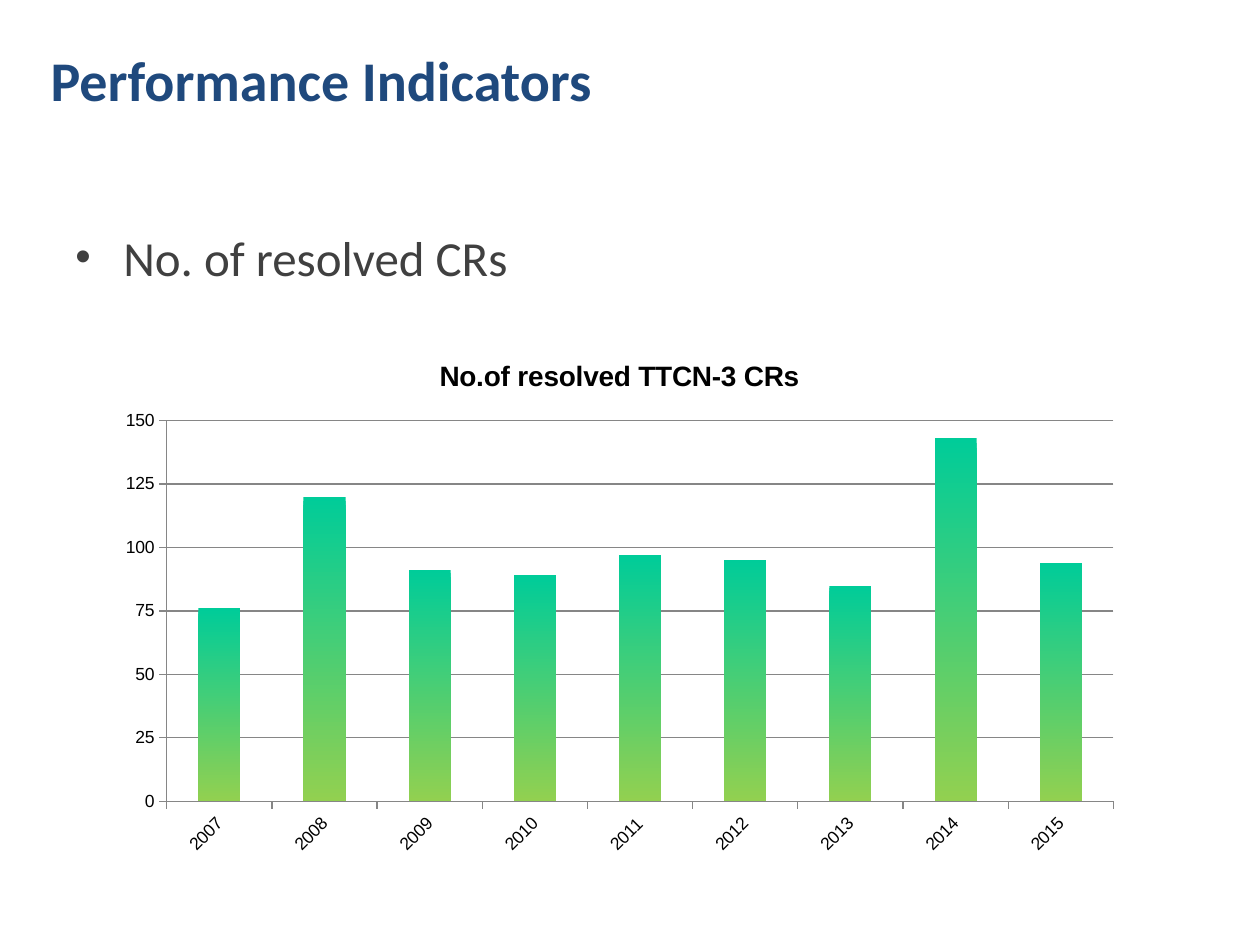
"""Build the Performance Indicators slide with its chart of resolved CRs."""
from lxml import etree
from pptx import Presentation
from pptx import util as u
from pptx.chart.data import CategoryChartData
from pptx.dml.color import RGBColor
from pptx.enum import chart as ch, text
from pptx.oxml import parse_xml
from pptx.oxml.ns import nsdecls, qn

HEAD = "Performance Indicators"
POINT = "No. of resolved CRs"
NAME = "No.of resolved TTCN-3 CRs"
DATA = {
    "2007": 76, "2008": 120, "2009": 91, "2010": 89, "2011": 97,
    "2012": 95, "2013": 85, "2014": 143, "2015": 94,
}
PLOT = {"x": 0.06, "y": 0.16, "w": 0.92, "h": 0.72}

NAVY = RGBColor(0x1F, 0x49, 0x7D)
DARK = RGBColor(0x40, 0x40, 0x40)
BLACK = RGBColor(0, 0, 0)
GREY = RGBColor(0x86, 0x86, 0x86)
TEAL = RGBColor(0x00, 0xCC, 0x99)
LIME = RGBColor(0x92, 0xD0, 0x50)


def px(n):
    return u.Emu(round(n * 914400 / 126))


def box(*dims):
    return [px(n) for n in dims]


def style(font, face, size, color, bold=False):
    font.name, font.size, font.bold = face, u.Pt(size), bold
    font.color.rgb = color


def add_run(para, words, *look):
    run = para.add_run()
    run.text = words
    style(run.font, *look)


def add_head(slide):
    head = slide.shapes.title
    head.left, head.top, head.width, head.height = box(38, 0, 1134, 158)
    frame = head.text_frame
    frame.vertical_anchor = text.MSO_ANCHOR.MIDDLE
    para = frame.paragraphs[0]
    para.alignment = text.PP_ALIGN.LEFT
    add_run(para, HEAD, "Calibri", 32, NAVY, True)


def add_point(slide):
    frame = slide.shapes.add_textbox(*box(63, 221, 1134, 84)).text_frame
    frame.word_wrap = True
    para = frame.paragraphs[0]
    props = para._p.get_or_add_pPr()
    props.set("marL", str(px(48)))
    props.set("indent", str(px(-48)))
    etree.SubElement(props, qn("a:buSzPct")).set("val", "90000")
    etree.SubElement(props, qn("a:buFont")).set("typeface", "Arial")
    etree.SubElement(props, qn("a:buChar")).set("char", "•")
    add_run(para, POINT, "Calibri", 28, DARK)


def place_plot(chart):
    area = chart._chartSpace.chart.plotArea
    for old in area.findall(qn("c:layout")):
        area.remove(old)
    dims = "".join(f'<c:{k} val="{v}"/>' for k, v in PLOT.items())
    area.insert(0, parse_xml(
        f'<c:layout {nsdecls("c")}><c:manualLayout>'
        '<c:layoutTarget val="inner"/><c:xMode val="edge"/>'
        f'<c:yMode val="edge"/>{dims}</c:manualLayout></c:layout>'))


def add_bars(slide):
    data = CategoryChartData()
    data.categories = list(DATA)
    data.add_series("Series 1", list(DATA.values()))
    chart = slide.shapes.add_chart(
        ch.XL_CHART_TYPE.COLUMN_STACKED, *box(105, 336, 1029, 529), data).chart
    style(chart.font, "Arial", 10, BLACK)
    chart.has_legend = False
    chart.has_title = True
    add_run(chart.chart_title.text_frame.paragraphs[0],
            NAME, "Arial", 16, BLACK, True)
    place_plot(chart)

    plot = chart.plots[0]
    plot.gap_width, plot.overlap = 150, 100
    plot.vary_by_categories = False
    fill = plot.series[0].format.fill
    fill.gradient()
    fill.gradient_angle = 270
    for stop, color in zip(fill.gradient_stops, (TEAL, LIME)):
        stop.color.rgb = color

    cats, vals = chart.category_axis, chart.value_axis
    vals.minimum_scale, vals.maximum_scale, vals.major_unit = 0, 150, 25
    vals.has_major_gridlines = True
    for axis in (cats, vals):
        axis.major_tick_mark = ch.XL_TICK_MARK.OUTSIDE
        style(axis.tick_labels.font, "Arial", 10, BLACK)
    for part in (cats, vals, vals.major_gridlines):
        part.format.line.color.rgb = GREY
        part.format.line.width = u.Pt(0.75)
    turn = cats._element.find(qn("c:txPr")).find(qn("a:bodyPr"))
    turn.set("rot", str(-45 * 60000))
    turn.set("vert", "horz")


def main():
    deck = Presentation()
    deck.slide_width, deck.slide_height = box(1260, 945)
    slide = deck.slides.add_slide(deck.slide_layouts[5])
    add_head(slide)
    add_point(slide)
    add_bars(slide)
    deck.save("out.pptx")


if __name__ == "__main__":
    main()
